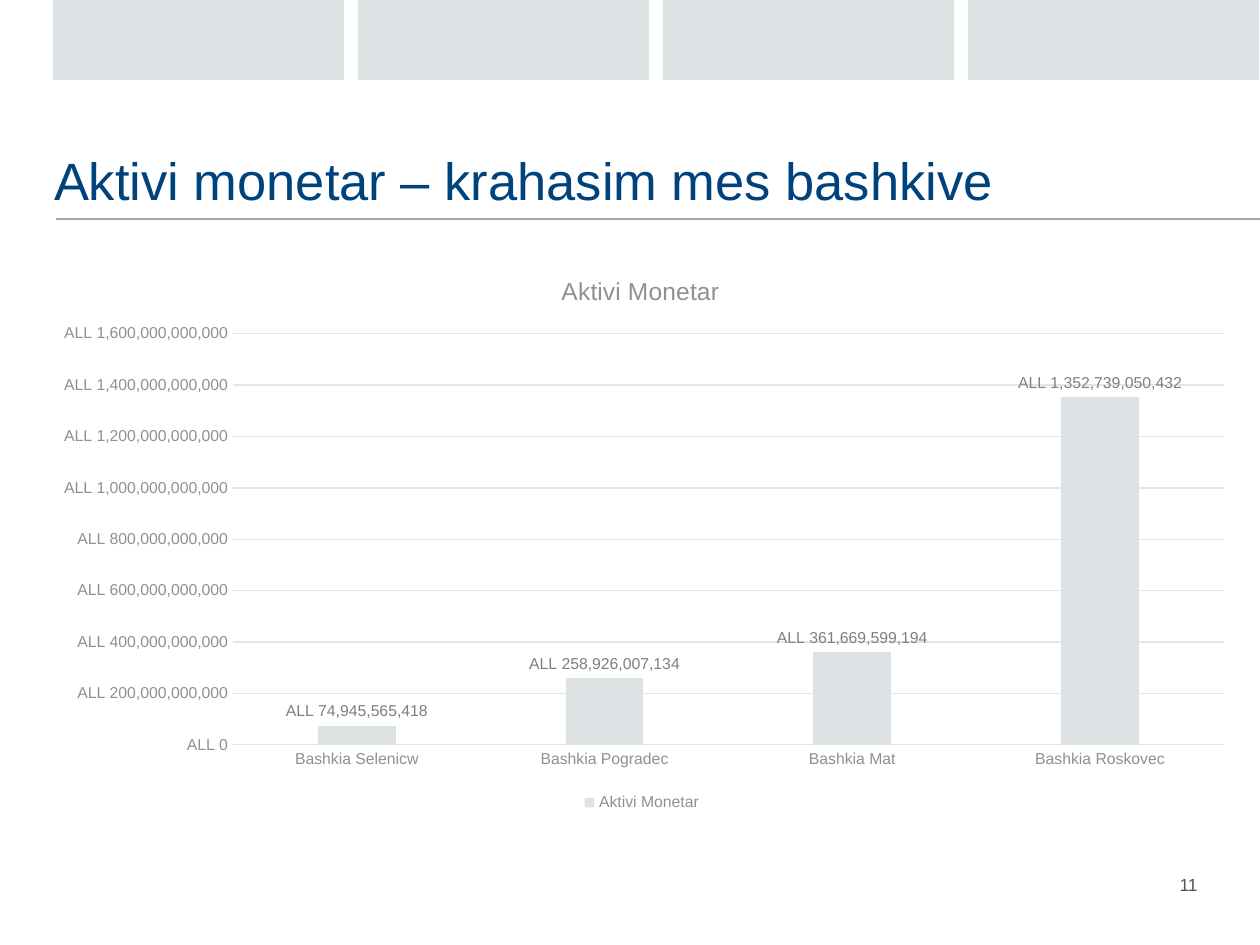
from dataclasses import dataclass

import pptx
import pptx.chart.data
import pptx.dml.color
import pptx.enum.chart
import pptx.enum.shapes
import pptx.enum.text
import pptx.oxml
import pptx.oxml.ns
import pptx.util

EMU_PER_PX = 914400 / 126
FONT = "Arial"
COLORS = {
    "band": "DDE3E4",
    "rule": "A6A6A6",
    "title": "00427C",
    "number": "545454",
    "axis": "909090",
    "label": "7F7F7F",
    "grid": "E5E5E5",
}
MONEY = r"[$ALL]\ #,##0;[Red][$ALL]\ #,##0"
SERIES_NAME = "Aktivi Monetar "
ASSETS = {
    "Bashkia Selenicw": 74945565418,
    "Bashkia Pogradec": 258926007134,
    "Bashkia Mat": 361669599194,
    "Bashkia Roskovec": 1352739050432,
}


@dataclass(frozen=True)
class Area:
    left: int
    top: int
    width: int
    height: int

    def emu(self) -> tuple:
        return tuple(px(n) for n in (self.left, self.top, self.width, self.height))


BANDS = [Area(53 + 305 * i, 0, 291, 80) for i in range(4)]
TITLE_AREA = Area(54, 95, 1102, 123)
NUMBER_AREA = Area(1128, 868, 82, 47)
CHART_AREA = Area(40, 253, 1208, 564)


def px(length: int) -> int:
    return round(length * EMU_PER_PX)


def rgb(name: str) -> pptx.dml.color.RGBColor:
    return pptx.dml.color.RGBColor.from_string(COLORS[name])


def style_font(font, size: float, color: str) -> None:
    font.name = FONT
    font.size = pptx.util.Pt(size)
    font.bold = False
    font.color.rgb = rgb(color)


def style_line(line, color: str) -> None:
    line.color.rgb = rgb(color)
    line.width = pptx.util.Pt(0.75)


def write_text(frame, text: str, *, size: float, color: str, align=None,
               spacing=None) -> None:
    para = frame.paragraphs[0]
    para.alignment = align
    para.line_spacing = spacing
    span = para.add_run()
    span.text = text
    style_font(span.font, size, color)


def add_band(page, area: Area) -> None:
    band = page.shapes.add_shape(
        pptx.enum.shapes.MSO_SHAPE.RECTANGLE, *area.emu())
    band.shadow.inherit = False
    band.fill.solid()
    band.fill.fore_color.rgb = rgb("band")
    band.line.fill.background()


def add_rule(page, left: int, right: int, top: int) -> None:
    rule = page.shapes.add_connector(
        pptx.enum.shapes.MSO_CONNECTOR.STRAIGHT,
        px(left), px(top), px(right), px(top))
    style_line(rule.line, "rule")
    rule._element.spPr.append(pptx.oxml.parse_xml(
        f"<a:effectLst {pptx.oxml.ns.nsdecls('a')}/>"))


def set_title(page, text: str) -> None:
    title = page.shapes.title
    title.left, title.top, title.width, title.height = TITLE_AREA.emu()
    frame = title.text_frame
    frame.margin_left = frame.margin_right = 0
    frame.margin_top = frame.margin_bottom = pptx.util.Inches(0.05)
    frame.word_wrap = True
    frame.vertical_anchor = pptx.enum.text.MSO_ANCHOR.BOTTOM
    write_text(frame, text, size=30, color="title", spacing=0.9,
               align=pptx.enum.text.PP_ALIGN.LEFT)


def add_page_number(page, number: str) -> None:
    box = page.shapes.add_textbox(*NUMBER_AREA.emu())
    box.text_frame.word_wrap = True
    write_text(box.text_frame, number, size=10, color="number",
               align=pptx.enum.text.PP_ALIGN.RIGHT)


def style_axes(chart) -> None:
    for axis in (chart.category_axis, chart.value_axis):
        axis.major_tick_mark = pptx.enum.chart.XL_TICK_MARK.NONE
        axis.minor_tick_mark = pptx.enum.chart.XL_TICK_MARK.NONE
        style_font(axis.tick_labels.font, 9, "axis")
    style_line(chart.category_axis.format.line, "grid")
    values = chart.value_axis
    values.minimum_scale = 0
    values.maximum_scale = 1_600_000_000_000
    values.major_unit = 200_000_000_000
    values.format.line.fill.background()
    style_line(values.major_gridlines.format.line, "grid")
    values.tick_labels.number_format = MONEY
    values.tick_labels.number_format_is_linked = False


def style_columns(plot) -> None:
    plot.gap_width = 219
    plot.overlap = -27
    plot.vary_by_categories = False
    series = plot.series[0]
    series.format.fill.solid()
    series.format.fill.fore_color.rgb = rgb("band")
    labels = series.data_labels
    labels.show_value = True
    labels.position = pptx.enum.chart.XL_LABEL_POSITION.OUTSIDE_END
    labels.number_format = MONEY
    labels.number_format_is_linked = False
    style_font(labels.font, 9, "label")


def add_asset_chart(page) -> None:
    data = pptx.chart.data.CategoryChartData(number_format=MONEY)
    data.categories = list(ASSETS)
    data.add_series(SERIES_NAME, list(ASSETS.values()))
    chart = page.shapes.add_chart(
        pptx.enum.chart.XL_CHART_TYPE.COLUMN_CLUSTERED,
        *CHART_AREA.emu(), data).chart
    style_font(chart.font, 10, "number")
    chart.has_title = True
    write_text(chart.chart_title.text_frame, SERIES_NAME, size=14, color="axis")
    chart.chart_title.include_in_layout = False
    chart.has_legend = True
    chart.legend.position = pptx.enum.chart.XL_LEGEND_POSITION.BOTTOM
    chart.legend.include_in_layout = False
    style_font(chart.legend.font, 9, "axis")
    style_axes(chart)
    style_columns(chart.plots[0])


def main() -> None:
    deck = pptx.Presentation()
    deck.slide_width, deck.slide_height = px(1260), px(945)
    page = deck.slides.add_slide(deck.slide_layouts.get_by_name("Title Only"))
    add_rule(page, 56, 1260, 219)
    for area in BANDS:
        add_band(page, area)
    add_page_number(page, "11")
    set_title(page, "Aktivi monetar – krahasim mes bashkive")
    add_asset_chart(page)
    deck.save("out.pptx")


if __name__ == "__main__":
    main()
